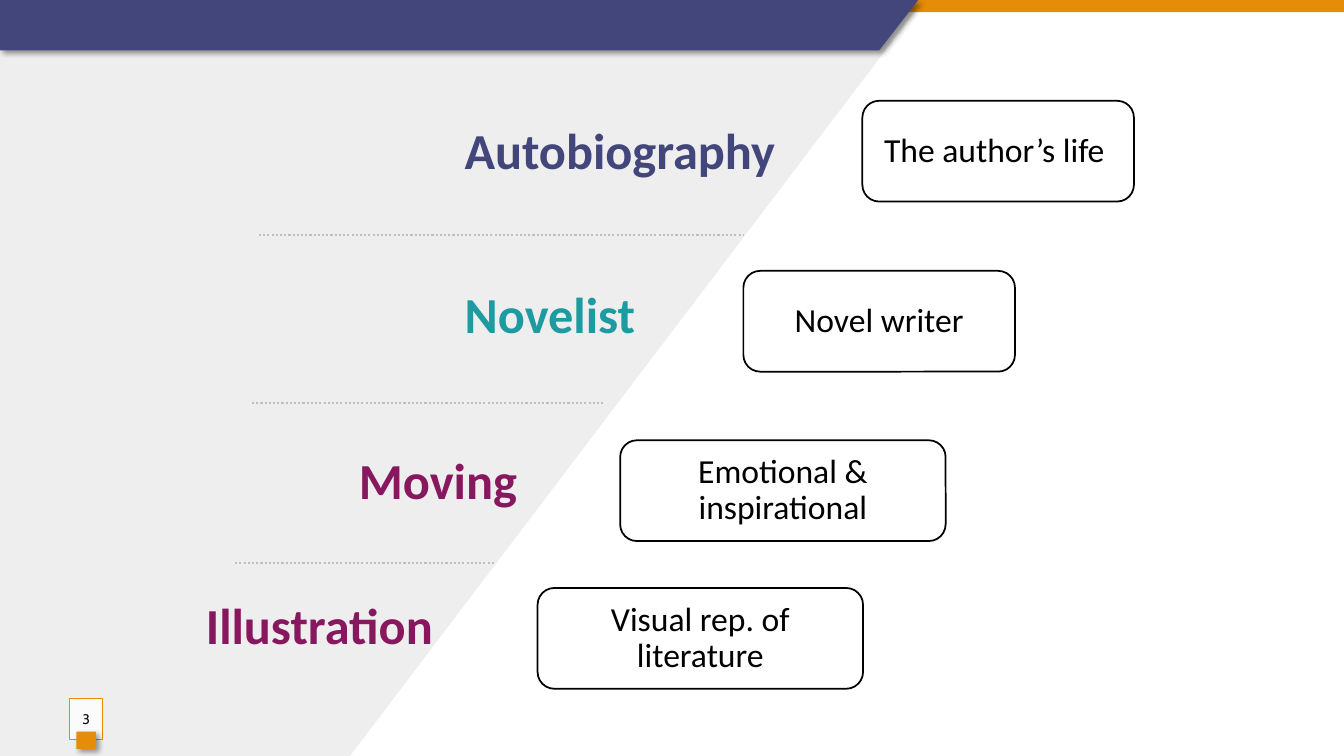
"""Build the vocabulary slide: four words on a slanted panel, each with its meaning."""
from lxml.etree import SubElement
from pptx import Presentation
from pptx.dml.color import RGBColor
from pptx.enum.dml import MSO_LINE
from pptx.enum.shapes import MSO_CONNECTOR, MSO_SHAPE as SHAPE
from pptx.enum.text import MSO_ANCHOR, MSO_AUTO_SIZE, PP_ALIGN
from pptx.oxml import parse_xml
from pptx.oxml.ns import nsdecls, qn
from pptx.util import Pt

COLORS = {"panel": "EEEEEE", "orange": "E58C09", "navy": "43467B", "teal": "1D9BA1",
          "plum": "87175F", "white": "FFFFFF", "black": "000000", "dots": "BFBFBF",
          "number": "0D0D0D"}
RGB = {name: RGBColor.from_string(value) for name, value in COLORS.items()}


def style(sp, fill, line=None, width=0, shadow=False):
    sp.fill.solid()
    sp.fill.fore_color.rgb = RGB[fill]
    if line:
        sp.line.color.rgb = RGB[line]
        sp.line.width = Pt(width)
    else:
        sp.line.fill.background()
    sp.shadow.inherit = False
    if shadow:
        effects = sp.element.spPr.find(qn("a:effectLst"))
        effects.append(parse_xml(
            f'<a:outerShdw {nsdecls("a")} blurRad="50800" dist="38100" dir="2700000" '
            f'algn="tl" rotWithShape="0"><a:srgbClr val="{COLORS["black"]}">'
            '<a:alpha val="40000"/></a:srgbClr></a:outerShdw>'))


def write(sp, text, size, color, align, font="Calibri", bold=False, spacing=0.9):
    tf = sp.text_frame
    tf.word_wrap = True
    tf.auto_size = MSO_AUTO_SIZE.NONE
    tf.vertical_anchor = MSO_ANCHOR.MIDDLE
    p = tf.paragraphs[0]
    pPr = p._p.get_or_add_pPr()
    pPr.set("marL", "0")
    pPr.set("indent", "0")
    SubElement(pPr, qn("a:buNone"))
    p.alignment = align
    p.line_spacing = spacing
    p.space_before = Pt(0)
    r = p.add_run()
    r.text = text
    r.font.name = font
    r.font.size = Pt(size)
    r.font.bold = bold
    r.font.color.rgb = RGB[color]


prs = Presentation()
prs.slide_width, prs.slide_height = Pt(960), Pt(540)
s = prs.slides.add_slide(prs.slide_layouts[4])
title = s.shapes.title.element
title.getparent().remove(title)
labels = list(s.placeholders)

panel = s.shapes.build_freeform(0, 0, scale=Pt(1))
panel.add_line_segments([(656, 0), (656, 5), (250, 540), (0, 540)])
style(panel.convert_to_shape(), "panel")

top_bar = s.shapes.add_shape(SHAPE.RECTANGLE, 0, 0, Pt(960), Pt(8.75))
style(top_bar, "orange")

banner = s.shapes.build_freeform(0, 0, scale=Pt(1))
banner.add_line_segments([(656, 0), (628.5, 36), (0, 36)])
style(banner.convert_to_shape(), "navy", shadow=True)

rows = [
    ("Autobiography", "navy", (172, 93, 389), "The author’s life ", (616, 72, 194)),
    ("Novelist", "teal", (144, 210, 317), "Novel writer", (531, 193.5, 194)),
    ("Moving", "plum", (144, 329, 232.5), "Emotional & inspirational", (443, 314.5, 232.5)),
    ("Illustration", "plum", (84, 432, 232.5), "Visual rep. of literature", (384, 420, 232.5)),
]
for label, (word, color, (lx, ly, lw), meaning, (x, y, w)) in zip(labels, rows):
    s.shapes._spTree.append(label.element)
    label.left, label.top, label.width, label.height = Pt(lx), Pt(ly), Pt(lw), Pt(33)
    write(label, word, 36, color, PP_ALIGN.RIGHT, bold=True)
    box = s.shapes.add_shape(SHAPE.ROUNDED_RECTANGLE, Pt(x), Pt(y), Pt(w), Pt(72))
    style(box, "white", "black", 1.25)
    write(box, meaning, 24, "black", PP_ALIGN.CENTER)

for x1, x2, y in [(185, 531, 168), (180, 432, 288), (168, 353.5, 402)]:
    divider = s.shapes.add_connector(MSO_CONNECTOR.STRAIGHT, Pt(x1), Pt(y), Pt(x2), Pt(y))
    divider.line.color.rgb = RGB["dots"]
    divider.line.width = Pt(1.5)
    divider.line.dash_style = MSO_LINE.ROUND_DOT
    SubElement(divider.element.spPr, qn("a:effectLst"))

number = s.shapes.add_shape(SHAPE.RECTANGLE, Pt(49.5), Pt(499), Pt(24), Pt(29))
style(number, "white", "orange", 0.75)
fill_color = number.element.spPr.find(qn("a:solidFill")).find(qn("a:srgbClr"))
SubElement(fill_color, qn("a:alpha")).set("val", "82000")
number.text_frame.margin_left = number.text_frame.margin_right = 0
write(number, "3", 10, "number", PP_ALIGN.CENTER, font="Cabin", spacing=1.0)

tab = s.shapes.add_shape(SHAPE.RECTANGLE, Pt(54.5), Pt(522.5), Pt(14), Pt(12.5))
style(tab, "orange", shadow=True)

prs.save("out.pptx")
